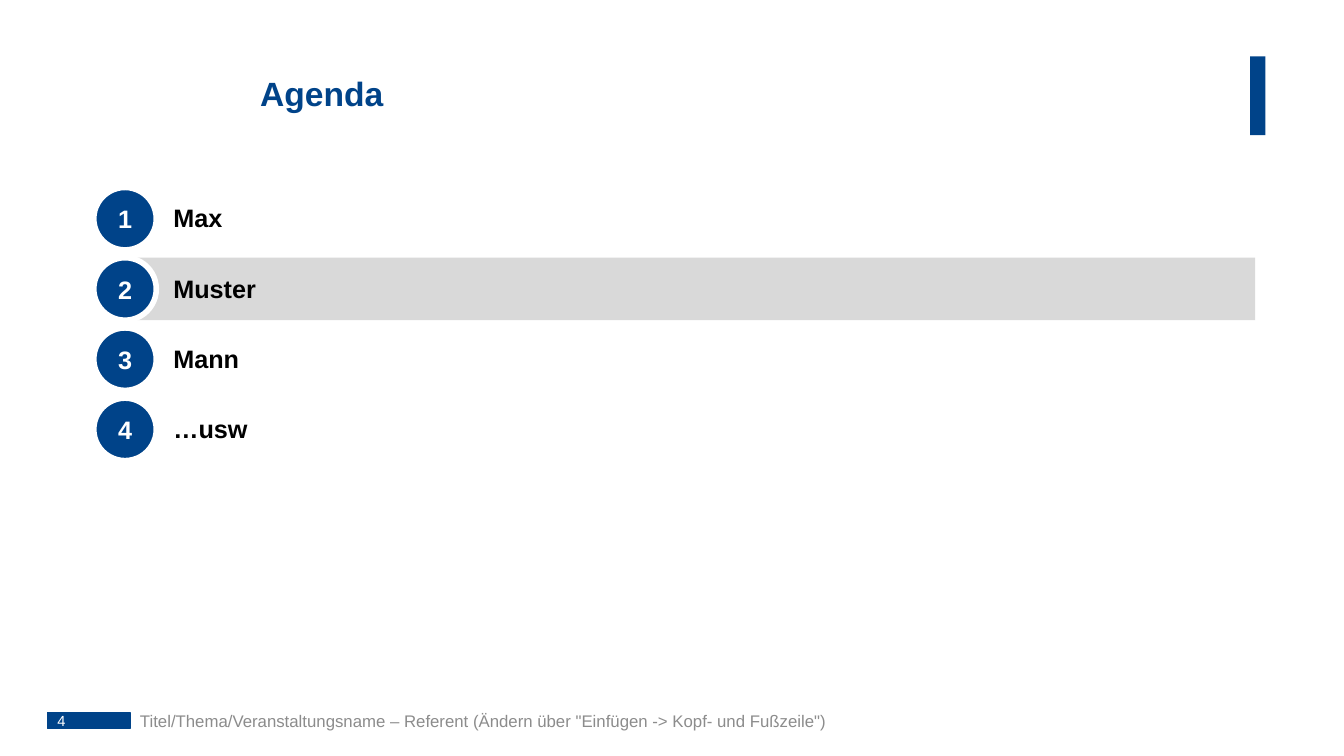
from dataclasses import dataclass

from pptx import Presentation
from pptx.dml.color import RGBColor
from pptx.enum.shapes import MSO_SHAPE
from pptx.enum.text import MSO_ANCHOR, PP_ALIGN
from pptx.util import Inches, Pt

# Content
TITLE = "Agenda"
TOPICS = ["Max", "Muster", "Mann", "…usw"]
CURRENT_TOPIC = 2
SLIDE_NUMBER = "4"
FOOTER = 'Titel/Thema/Veranstaltungsname – Referent (Ändern über "Einfügen -> Kopf- und Fußzeile")'


@dataclass(frozen=True)
class Theme:
    font: str = "Arial"
    blue: str = "004389"
    band: str = "D9D9D9"
    grey: str = "8C8C8C"
    white: str = "FFFFFF"
    black: str = "000000"
    title_size: float = 24
    topic_size: float = 18
    footer_size: float = 12
    number_size: float = 10.5


THEME = Theme()

# Grid in inches
SLIDE_WIDTH, SLIDE_HEIGHT = 13.33, 7.5
HEADER_TOP, HEADER_HEIGHT = 0.56, 0.78
TITLE_LEFT, ACCENT_LEFT, ACCENT_WIDTH = 2.48, 12.4, 0.15
FOOTER_TOP, FOOTER_HEIGHT = 7.07, 0.16
NUMBER_LEFT, FOOTER_LEFT, FOOTER_WIDTH = 0.47, 1.29, 7.63
FIRST_ROW, LAST_ROW, ROW_HEIGHT = 1.86, 3.95, 0.62
ROW_PITCH = (LAST_ROW - FIRST_ROW) / (len(TOPICS) - 1)
CIRCLE_LEFT, TOPIC_LEFT, TOPIC_WIDTH = 0.93, 1.63, 6.03
BAND_LEFT, BAND_WIDTH = 1.29, 11.16
SIDE_INSET, ROW_INSET = 0.09, 0.16


def write(shape, text, size, color, bold=False, align=PP_ALIGN.LEFT,
          anchor=MSO_ANCHOR.MIDDLE, insets=(0.1, 0, 0.1, 0)):
    """Put one formatted paragraph in a shape; insets are left, top, right, bottom."""
    frame = shape.text_frame
    frame.text = text
    left, top, right, bottom = map(Inches, insets)
    frame_format = {"word_wrap": True, "vertical_anchor": anchor, "margin_left": left,
                    "margin_top": top, "margin_right": right, "margin_bottom": bottom}
    for name, value in frame_format.items():
        setattr(frame, name, value)
    paragraph = frame.paragraphs[0]
    paragraph.alignment = align
    font_format = {"name": THEME.font, "size": Pt(size), "bold": bold}
    font = paragraph.runs[0].font
    for name, value in font_format.items():
        setattr(font, name, value)
    font.color.rgb = RGBColor.from_string(color)
    return paragraph


def add_block(slide, kind, box, fill, line=None, line_width=1):
    shape = slide.shapes.add_shape(kind, *map(Inches, box))
    shape.shadow.inherit = False
    shape.fill.solid()
    shape.fill.fore_color.rgb = RGBColor.from_string(fill)
    if line:
        shape.line.color.rgb = RGBColor.from_string(line)
        shape.line.width = Pt(line_width)
    else:
        shape.line.fill.background()
    return shape


def add_header(slide):
    add_block(slide, MSO_SHAPE.RECTANGLE,
              (ACCENT_LEFT, HEADER_TOP, ACCENT_WIDTH, HEADER_HEIGHT), THEME.blue)
    title = slide.shapes.title
    box = (TITLE_LEFT, HEADER_TOP, ACCENT_LEFT - TITLE_LEFT, HEADER_HEIGHT)
    for name, value in zip(("left", "top", "width", "height"), box):
        setattr(title, name, Inches(value))
    paragraph = write(title, TITLE, THEME.title_size, THEME.blue, bold=True)
    paragraph.line_spacing = 0.9


def add_topic(slide, number, topic):
    top = FIRST_ROW + (number - 1) * ROW_PITCH
    if number == CURRENT_TOPIC:
        add_block(slide, MSO_SHAPE.RECTANGLE,
                  (BAND_LEFT, top, BAND_WIDTH, ROW_HEIGHT), THEME.band)
    label = slide.shapes.add_textbox(
        *map(Inches, (TOPIC_LEFT, top, TOPIC_WIDTH, ROW_HEIGHT)))
    write(label, topic, THEME.topic_size, THEME.black, bold=True,
          anchor=MSO_ANCHOR.TOP, insets=(SIDE_INSET, ROW_INSET, 0, ROW_INSET))
    circle = add_block(slide, MSO_SHAPE.OVAL, (CIRCLE_LEFT, top, ROW_HEIGHT, ROW_HEIGHT),
                       THEME.blue, THEME.white, 4)
    write(circle, str(number), THEME.topic_size, THEME.white, bold=True,
          align=PP_ALIGN.CENTER, insets=(SIDE_INSET, ROW_INSET) * 2)
    circle.text_frame.word_wrap = False


def add_footer(slide):
    number_bar = add_block(slide, MSO_SHAPE.RECTANGLE,
                           (NUMBER_LEFT, FOOTER_TOP, FOOTER_LEFT - NUMBER_LEFT, FOOTER_HEIGHT),
                           THEME.blue, THEME.blue)
    write(number_bar, SLIDE_NUMBER, THEME.number_size, THEME.white)
    footer = slide.shapes.add_textbox(
        *map(Inches, (FOOTER_LEFT, FOOTER_TOP, FOOTER_WIDTH, FOOTER_HEIGHT)))
    write(footer, FOOTER, THEME.footer_size, THEME.grey)


def main():
    presentation = Presentation()
    presentation.slide_width = Inches(SLIDE_WIDTH)
    presentation.slide_height = Inches(SLIDE_HEIGHT)
    title_only = presentation.slide_layouts[5]
    slide = presentation.slides.add_slide(title_only)
    add_header(slide)
    for number, topic in enumerate(TOPICS, start=1):
        add_topic(slide, number, topic)
    add_footer(slide)
    presentation.save("out.pptx")


if __name__ == "__main__":
    main()
